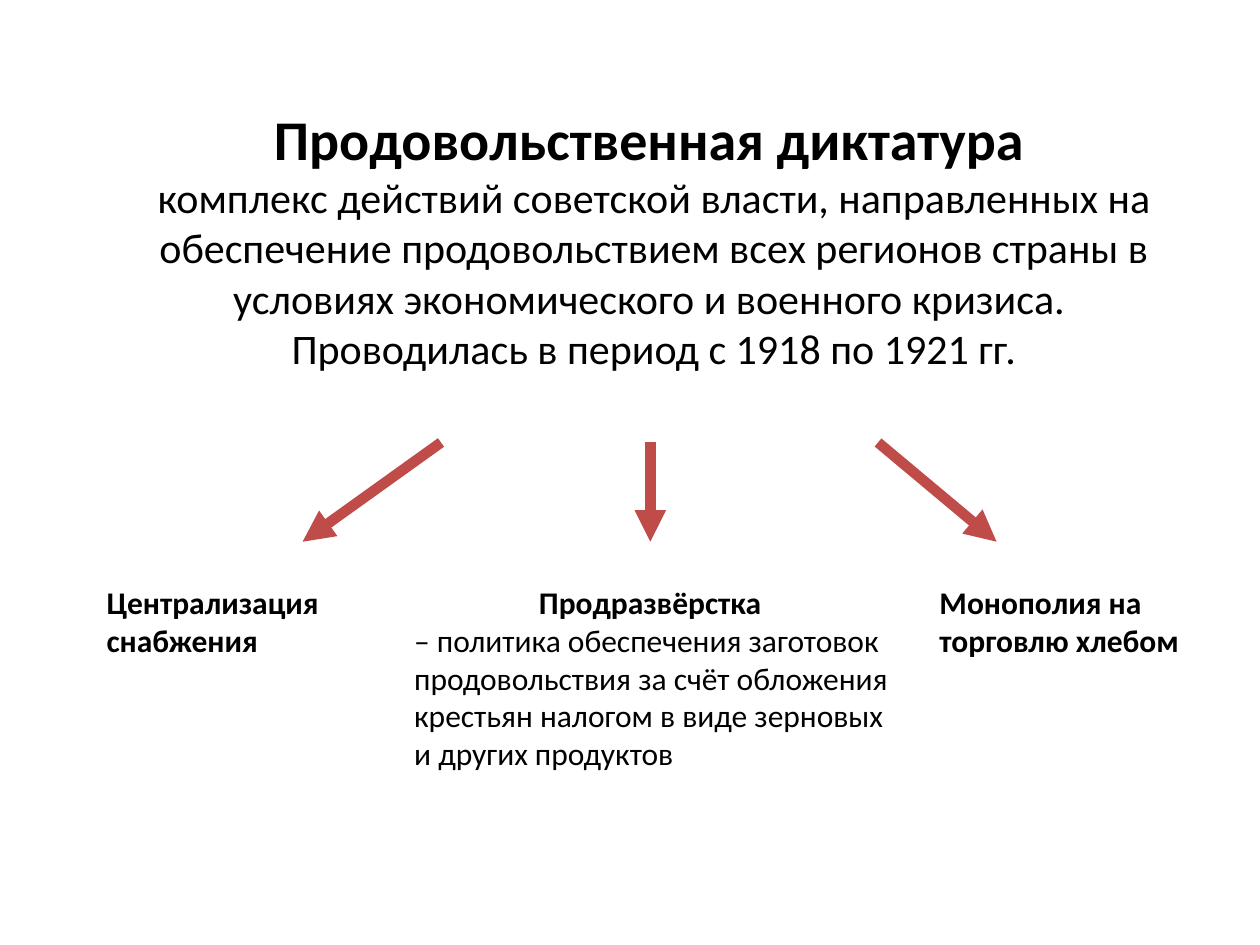
from lxml import etree
from pptx import Presentation
from pptx.dml.color import RGBColor as Rgb
from pptx.enum.shapes import MSO_CONNECTOR as Link
from pptx.enum.text import MSO_ANCHOR as Anchor, MSO_AUTO_SIZE as Fit, PP_ALIGN as Align
from pptx.oxml.ns import qn
from pptx.util import Cm, Pt

# Content: a paragraph is (alignment, runs), a run is (text, size, bold)
MID, LEFT = Align.CENTER, Align.LEFT
HEAD = [
    (MID, [("Продовольственная диктатура", 32, True), (" ", 24, False)]),
    (MID, [("комплекс действий советской власти, направленных на обеспечение "
            "продовольствием всех регионов страны в условиях экономического "
            "и военного кризиса. ", 24, False)]),
    (MID, [("Проводилась в период с 1918 по 1921 гг.", 24, False)]),
]
# Each measure: left, width, height, paragraphs
PARTS = [
    (1.9, 5.1, 1.8, [(LEFT, [("Централизация снабжения", 18, True)])]),
    (8.1, 10.16, 4.11, [
        (MID, [("Продразвёрстка ", 18, True)]),
        (LEFT, [("– политика обеспечения заготовок продовольствия за счёт "
                 "обложения крестьян налогом в виде зерновых и других продуктов",
                 18, False)]),
    ]),
    (18.69, 6.12, 1.8, [(LEFT, [("Монополия на торговлю хлебом", 18, True)])]),
]
# Each arrow: x at its start, x at its tip
ARROWS = [(8.89, 6.1), (13.11, 13.11), (17.7, 20.09)]
START, TIP, ROW = 8.92, 10.92, 11.63
COLORS = {"text": "000000", "arrow": "BF4C48"}
FONT = "Calibri"

deck = Presentation()
deck.slide_width, deck.slide_height = Cm(25.4), Cm(19.05)
slide = deck.slides.add_slide(deck.slide_layouts[6])


def write(text, box, anchor=Anchor.TOP, fit=Fit.NONE):
    frame = slide.shapes.add_textbox(*map(Cm, box)).text_frame
    frame.word_wrap = True
    frame.auto_size = fit
    frame.vertical_anchor = anchor
    for i, (align, runs) in enumerate(text):
        para = frame.add_paragraph() if i else frame.paragraphs[0]
        para.alignment = align
        for words, size, bold in runs:
            run = para.add_run()
            run.text = words
            font = run.font
            font.name, font.size, font.bold = FONT, Pt(size), bold
            font.color.rgb = Rgb.from_string(COLORS["text"])


def arrow(x1, x2):
    link = slide.shapes.add_connector(
        Link.STRAIGHT, Cm(x1), Cm(START), Cm(x2), Cm(TIP))
    link.line.width = Pt(6)
    link.line.color.rgb = Rgb.from_string(COLORS["arrow"])
    props = link.line._get_or_add_ln()
    etree.SubElement(props, qn("a:tailEnd"), type="triangle")
    etree.SubElement(props.getparent(), qn("a:effectLst"))


# Definition
write(HEAD, (2.39, 3.35, 21.59, 2.92), anchor=Anchor.MIDDLE)

# Measures
for left, width, height, text in PARTS:
    write(text, (left, ROW, width, height), fit=Fit.SHAPE_TO_FIT_TEXT)

# Arrows from the definition to the measures
for ends in ARROWS:
    arrow(*ends)

deck.save("out.pptx")
